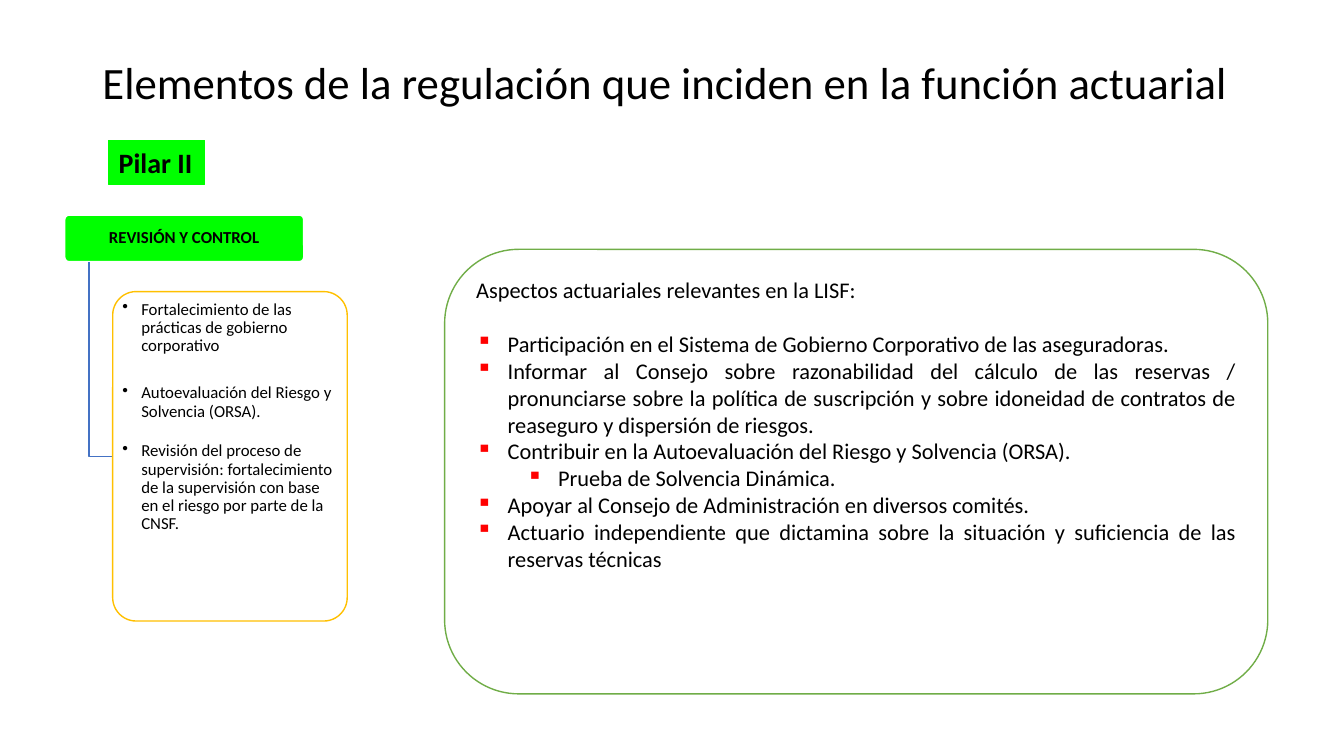
from dataclasses import dataclass

from lxml import etree
from pptx import Presentation
from pptx.dml.color import RGBColor
from pptx.enum import shapes, text
from pptx.oxml import ns
from pptx.util import Pt

TITLE = "Elementos de la regulación que inciden en la función actuarial"
PILLAR = "Pilar II"
HEADING = "REVISIÓN Y CONTROL"
# (text, space after)
REVIEW_ITEMS = [
    ("Fortalecimiento de las prácticas de gobierno corporativo", 21),
    ("Autoevaluación del Riesgo y Solvencia (ORSA).", 15.5),
    ("Revisión del proceso de supervisión: fortalecimiento de la supervisión "
     "con base en el riesgo por parte de la CNSF.", 0),
]
ASPECTS_INTRO = "Aspectos actuariales relevantes en la LISF:"
# (level, text)
ASPECTS = [
    (0, "Participación en el Sistema de Gobierno Corporativo de las aseguradoras."),
    (0, "Informar al Consejo sobre razonabilidad del cálculo de las reservas / "
        "pronunciarse sobre la política de suscripción y sobre idoneidad de "
        "contratos de reaseguro y dispersión de riesgos."),
    (0, "Contribuir en la Autoevaluación del Riesgo y Solvencia (ORSA)."),
    (1, "Prueba de Solvencia Dinámica."),
    (0, "Apoyar al Consejo de Administración en diversos comités."),
    (0, "Actuario independiente que dictamina sobre la situación y suficiencia "
        "de las reservas técnicas"),
]


@dataclass(frozen=True)
class Theme:
    font: str = "Calibri"
    ink: str = "000000"
    paper: str = "FFFFFF"
    green: str = "00FF00"
    amber: str = "FFC000"
    leaf: str = "70AD47"
    blue: str = "4472C4"
    bullet: str = "FF0000"
    title: int = 32
    pillar: int = 20
    body: int = 16
    small: int = 12


THEME = Theme()
# left, top, width, height
TITLE_AREA = (66, 21.5, 828, 78.5)
PILLAR_AREA = (77.7, 100.2, 68.7, 31.6)
HEADING_AREA = (46, 153.4, 171.2, 33.8)
REVIEW_AREA = (80.5, 208.3, 167.5, 235.3)
ASPECTS_AREA = (317.6, 178.1, 588, 317.5)
BRANCH_X = 63.5


def rgb(value):
    return RGBColor.from_string(value)


def points(values):
    return [Pt(value) for value in values]


def add_box(page, kind, area, fill, line, width, corner=None):
    box = page.shapes.add_shape(kind, *points(area))
    box.shadow.inherit = False
    box.fill.solid()
    box.fill.fore_color.rgb = rgb(fill)
    box.line.color.rgb = rgb(line)
    box.line.width = Pt(width)
    if corner is not None:
        box.adjustments[0] = corner
    box.text_frame.vertical_anchor = text.MSO_ANCHOR.TOP
    return box


def set_margins(frame, side, top):
    frame.margin_left = frame.margin_right = Pt(side)
    frame.margin_top = frame.margin_bottom = Pt(top)


def add_bullet(para, char, margin, hang, color):
    props = para._p.get_or_add_pPr()
    props.set("marL", str(Pt(margin)))
    props.set("indent", str(-Pt(hang)))
    tint = etree.SubElement(props, ns.qn("a:buClr"))
    etree.SubElement(tint, ns.qn("a:srgbClr"), val=color)
    etree.SubElement(props, ns.qn("a:buChar"), char=char)


def write(para, words, size, align=text.PP_ALIGN.LEFT, bold=False, spacing=1.0):
    para.text = words
    para.alignment = align
    para.line_spacing = spacing
    para.font.name = THEME.font
    para.font.size = Pt(size)
    para.font.bold = bold
    para.font.color.rgb = rgb(THEME.ink)


def add_title(page):
    title = page.shapes.title
    title.left, title.top, title.width, title.height = points(TITLE_AREA)
    title.text_frame.vertical_anchor = text.MSO_ANCHOR.MIDDLE
    write(title.text_frame.paragraphs[0], TITLE, THEME.title, spacing=0.9)


def add_heading(page):
    box = add_box(page, shapes.MSO_SHAPE.ROUNDED_RECTANGLE, HEADING_AREA,
                  THEME.green, THEME.paper, 1.5, 0.1)
    frame = box.text_frame
    frame.vertical_anchor = text.MSO_ANCHOR.MIDDLE
    set_margins(frame, 2, 1.5)
    write(frame.paragraphs[0], HEADING, THEME.small, text.PP_ALIGN.CENTER, True, 0.9)


def add_branch(page):
    """Draw the elbow from the heading down to the middle of the review box."""
    start = HEADING_AREA[1] + HEADING_AREA[3]
    middle = REVIEW_AREA[1] + REVIEW_AREA[3] / 2
    builder = page.shapes.build_freeform(Pt(BRANCH_X), Pt(start))
    corners = [(BRANCH_X, middle), (REVIEW_AREA[0], middle)]
    builder.add_line_segments([points(corner) for corner in corners], close=False)
    branch = builder.convert_to_shape()
    branch.shadow.inherit = False
    branch.fill.background()
    branch.line.color.rgb = rgb(THEME.blue)
    branch.line.width = Pt(1)


def add_review(page):
    box = add_box(page, shapes.MSO_SHAPE.ROUNDED_RECTANGLE, REVIEW_AREA,
                  THEME.paper, THEME.amber, 1, 0.1)
    frame = box.text_frame
    set_margins(frame, 2, 1.5)
    for index, (words, gap) in enumerate(REVIEW_ITEMS):
        para = frame.add_paragraph() if index else frame.paragraphs[0]
        add_bullet(para, "•", 13.5, 13.5, THEME.ink)
        write(para, words, THEME.small, spacing=0.9)
        para.space_after = Pt(gap)


def add_pillar(page):
    box = add_box(page, shapes.MSO_SHAPE.RECTANGLE, PILLAR_AREA,
                  THEME.green, THEME.green, 0.75)
    box.text_frame.word_wrap = False
    write(box.text_frame.paragraphs[0], PILLAR, THEME.pillar, bold=True)


def add_aspects(page):
    box = add_box(page, shapes.MSO_SHAPE.ROUNDED_RECTANGLE, ASPECTS_AREA,
                  THEME.paper, THEME.leaf, 1)
    frame = box.text_frame
    intro = frame.paragraphs[0]
    write(intro, ASPECTS_INTRO, THEME.body, text.PP_ALIGN.JUSTIFY)
    intro.space_after = Pt(19.5)
    for level, words in ASPECTS:
        para = frame.add_paragraph()
        para.level = level
        add_bullet(para, "▪", 22.5 + 36 * level, 22.5, THEME.bullet)
        write(para, words, THEME.body, text.PP_ALIGN.JUSTIFY)


def main():
    deck = Presentation()
    deck.slide_width, deck.slide_height = points((960, 540))
    page = deck.slides.add_slide(deck.slide_layouts[5])
    for add_part in (add_title, add_heading, add_branch, add_review,
                     add_pillar, add_aspects):
        add_part(page)
    deck.save("out.pptx")


if __name__ == "__main__":
    main()
